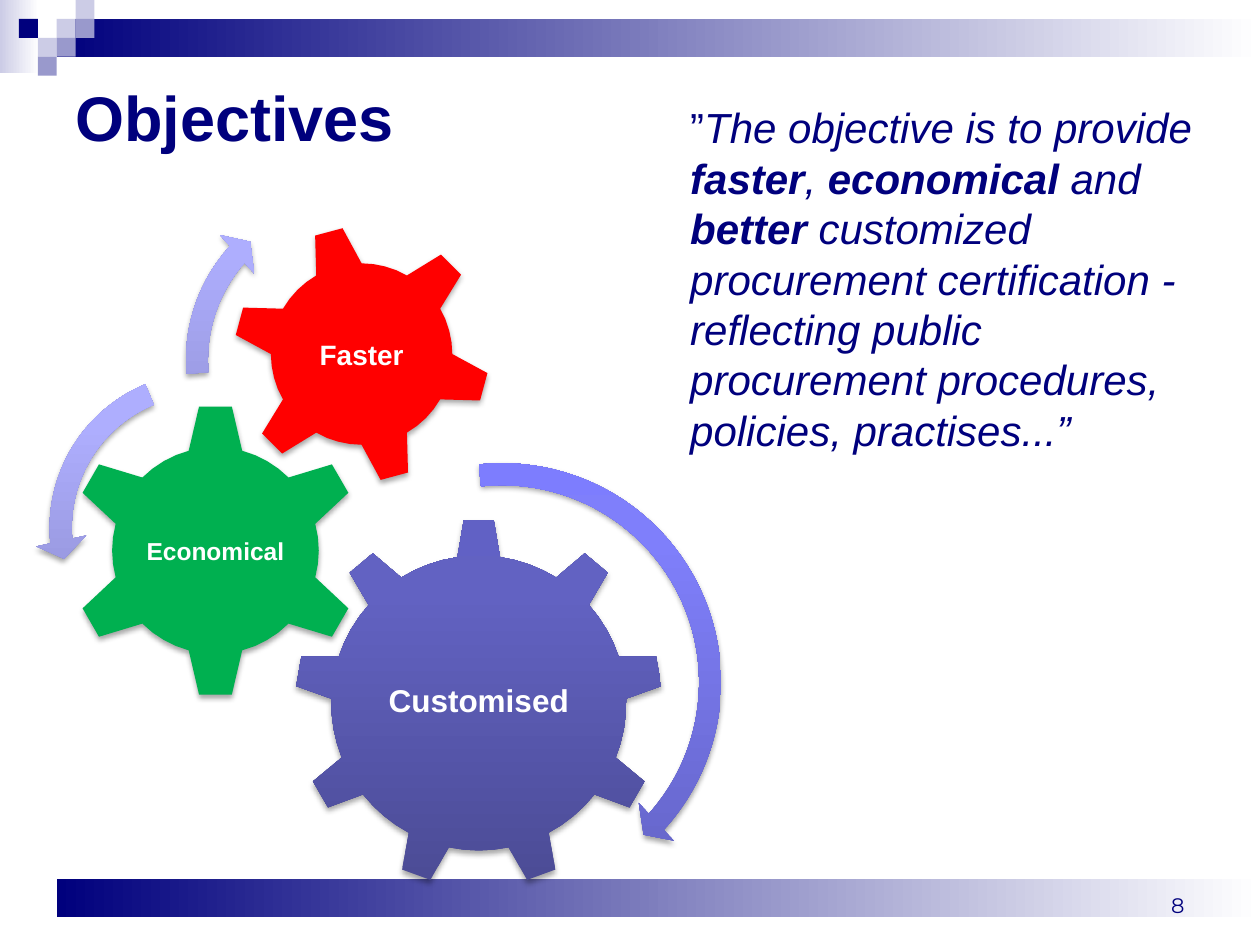
"""Build the Objectives slide with three interlocking gears."""
from math import cos, radians, sin

from lxml import etree
from pptx import Presentation
from pptx import util as u
from pptx.dml.color import RGBColor
from pptx.enum import shapes, text
from pptx.oxml.ns import qn

COLORS = {"navy": "00007D", "lilac": "CCCCE6", "violet": "9999CC", "white": "FFFFFF",
          "green": "00B050", "red": "FF0000", "black": "000000"}
INDIGO = [(0, "4C4C96"), (80, "6262C2"), (100, "6161C5")]
BLUE = [(0, "6262C1"), (80, "7F7FFB"), (100, "7D7DFE")]
PALE = [(0, "8686C4"), (80, "AEAEFE"), (100, "AFAFFF")]
NAVY_FADE = [(0, COLORS["navy"]), (100, COLORS["white"])]
LILAC_FADE = [(0, COLORS["lilac"]), (100, COLORS["white"])]

TILE = 0.15
BANDS = [((0.45, 6.98, 9.55, 0.3), NAVY_FADE), ((0, 0, 0.31, 0.58), LILAC_FADE),
         ((0.45, 0.15, 9.55, 0.3), NAVY_FADE)]
TILES = [(3, 1, "lilac"), (4, 0, "lilac"), (4, 1, "violet"), (2, 2, "lilac"),
         (1, 1, "navy"), (3, 2, "violet"), (2, 3, "violet")]

GEARS = [
    dict(label="Customised", size=18, center=(3.8, 5.58), radii=(1.17, 1.455),
         teeth=9, turn=0, half_angles=(8.3, 4.7), paint=INDIGO),
    dict(label="Economical", size=14, center=(1.71, 4.37), radii=(0.82, 1.15),
         teeth=6, turn=0, half_angles=(15, 6.5), paint=COLORS["green"]),
    dict(label="Faster", size=16, center=(2.87, 2.81), radii=(0.72, 1.01),
         teeth=6, turn=-15, half_angles=(15, 6.4), paint=COLORS["red"]),
]
CLOCKWISE = shapes.MSO_SHAPE.CIRCULAR_ARROW
COUNTER = shapes.MSO_SHAPE.LEFT_CIRCULAR_ARROW
ARROWS = [
    (CLOCKWISE, (2.13, 3.56, 3.71), (0.047, 2.99, 25.294, 158.33, 0.055), BLUE),
    (COUNTER, (0.28, 2.84, 2.7), (0.065, 4.3, 104.891, 148.378, 0.075), PALE),
    (CLOCKWISE, (1.36, 1.4, 2.91), (0.06, 3.941, 133.138, 105.082, 0.07), PALE),
]

QUOTE = [("”", ""), ("The objective is to provide ", "i"), ("faster", "bi"), (", ", "i"),
         ("economical", "bi"), (" and ", "i"), ("better", "bi"),
         (" customized procurement certification - reflecting public procurement "
          "procedures, policies, practises...”", "i")]


def paint_shape(shape, paint, angle=0):
    """Apply a solid colour or a list of gradient stops, without outline or shadow."""
    shape.shadow.inherit = False
    shape.line.fill.background()
    if isinstance(paint, str):
        shape.fill.solid()
        shape.fill.fore_color.rgb = RGBColor.from_string(paint)
        return
    shape.fill.gradient()
    shape.fill.gradient_angle = angle
    stops = shape._element.spPr.find(".//" + qn("a:gsLst"))
    for stop in list(stops):
        stops.remove(stop)
    for position, color in paint:
        stop = etree.SubElement(stops, qn("a:gs"), pos=str(position * 1000))
        etree.SubElement(stop, qn("a:srgbClr"), val=color)


def add_shadow(shape):
    """Drop a soft shadow straight below the shape."""
    effects = shape._element.spPr.find(qn("a:effectLst"))
    shadow = etree.SubElement(effects, qn("a:outerShdw"), blurRad=str(u.Pt(3.1)),
                              dist=str(u.Pt(1.8)), dir="5400000", rotWithShape="0")
    color = etree.SubElement(shadow, qn("a:srgbClr"), val=COLORS["black"])
    etree.SubElement(color, qn("a:alpha"), val="35000")


def write(frame, runs, size, color, align, anchor, font="Arial"):
    """Fill a text frame with one paragraph of styled runs and return it."""
    frame.word_wrap = True
    frame.vertical_anchor = anchor
    paragraph = frame.paragraphs[0]
    paragraph.alignment = align
    for words, style in runs:
        run = paragraph.add_run()
        run.text = words
        run.font.size, run.font.name = u.Pt(size), font
        run.font.bold, run.font.italic = "b" in style, "i" in style
        run.font.color.rgb = RGBColor.from_string(COLORS[color])
    return paragraph


def gear_outline(center, radii, teeth, turn, half_angles):
    """Return the points of a gear in EMU, clockwise from its first tooth."""
    body, tip = radii
    base_half, tip_half = half_angles
    pitch, steps = 360 / teeth, 4
    valley = pitch - 2 * base_half
    points = []
    for tooth in range(teeth):
        middle = turn + tooth * pitch
        polar = [(middle - tip_half, tip), (middle + tip_half, tip)]
        polar += [(middle + base_half + valley * step / steps, body)
                  for step in range(steps + 1)]
        points += [(u.Inches(center[0] + r * sin(radians(a))),
                    u.Inches(center[1] - r * cos(radians(a)))) for a, r in polar]
    return points


def add_gear(slide, label, size, paint, **geometry):
    """Draw one labelled gear."""
    start, *rest = gear_outline(**geometry)
    builder = slide.shapes.build_freeform(*start)
    builder.add_line_segments(rest, close=True)
    gear = builder.convert_to_shape()
    paint_shape(gear, paint, 90)
    add_shadow(gear)
    write(gear.text_frame, [(label, "b")], size, "white",
          text.PP_ALIGN.CENTER, text.MSO_ANCHOR.MIDDLE)


def add_box(slide, *box):
    """Add a text box and return its frame."""
    return slide.shapes.add_textbox(*map(u.Inches, box)).text_frame


def main():
    """Assemble and save the slide."""
    deck = Presentation()
    deck.slide_width, deck.slide_height = u.Inches(10), u.Inches(7.5)
    slide = deck.slides.add_slide(deck.slide_layouts[6])

    tiles = [((col * TILE, row * TILE, TILE, TILE), COLORS[c]) for col, row, c in TILES]
    for box, paint in BANDS + tiles:
        block = slide.shapes.add_shape(shapes.MSO_SHAPE.RECTANGLE, *map(u.Inches, box))
        paint_shape(block, paint)

    left, right = text.PP_ALIGN.LEFT, text.PP_ALIGN.RIGHT
    write(add_box(slide, 0.5, 0.3, 9, 1.25), [("Objectives", "b")], 36, "navy",
          left, text.MSO_ANCHOR.MIDDLE)
    quote = write(add_box(slide, 5, 0.76, 4.8, 4.32), QUOTE, 24, "navy",
                  left, text.MSO_ANCHOR.TOP)
    quote._p.get_or_add_pPr().set("marL", str(u.Inches(0.38)))

    for gear in GEARS:
        add_gear(slide, **gear)
    for kind, (x, y, side), adjustments, paint in ARROWS:
        arrow = slide.shapes.add_shape(kind, *map(u.Inches, (x, y, side, side)))
        for index, value in enumerate(adjustments):
            arrow.adjustments[index] = value
        paint_shape(arrow, paint, 90)
        add_shadow(arrow)

    write(add_box(slide, 7.17, 6.83, 2.33, 0.5), [("8", "")], 12, "navy",
          right, text.MSO_ANCHOR.BOTTOM, "Montserrat")
    deck.save("out.pptx")


if __name__ == "__main__":
    main()
